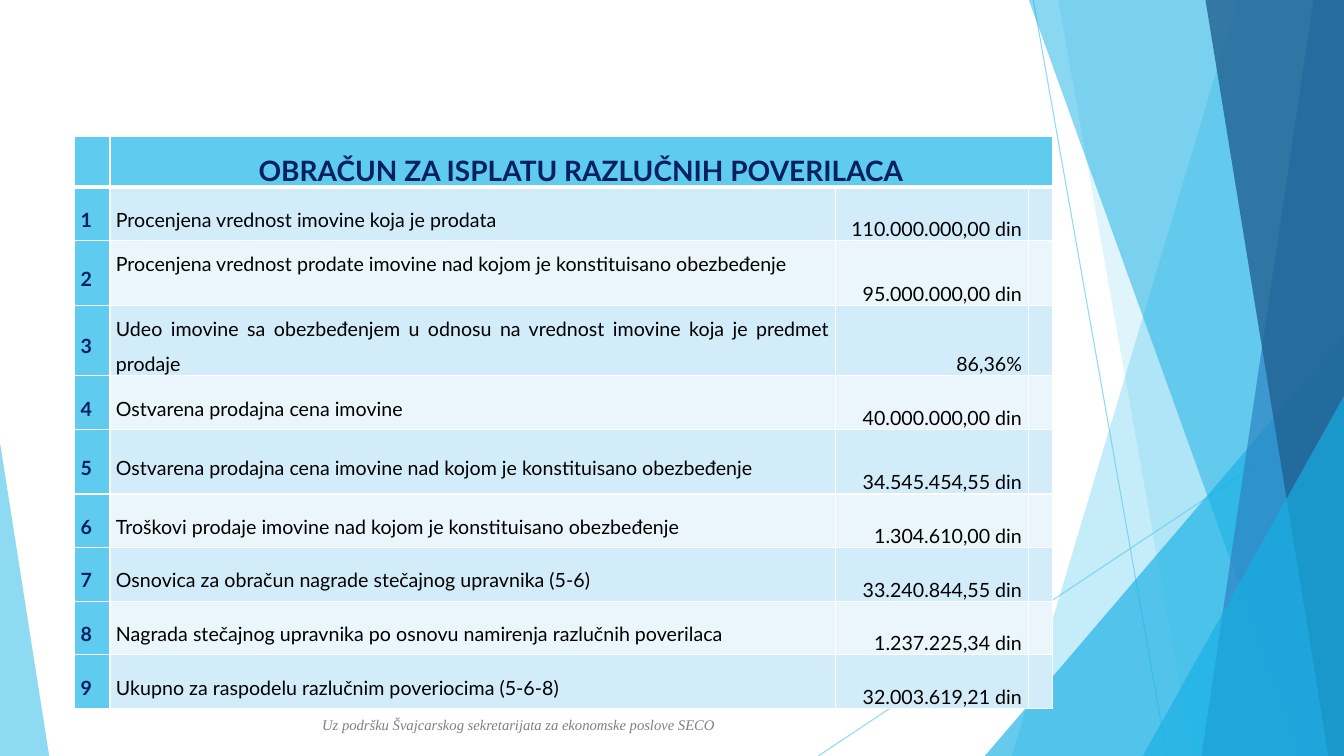
from lxml.etree import SubElement
from pptx import Presentation
from pptx.dml.color import RGBColor
from pptx.enum.shapes import MSO_CONNECTOR, MSO_SHAPE
from pptx.enum.text import MSO_ANCHOR, PP_ALIGN
from pptx.oxml import parse_xml
from pptx.oxml.ns import nsdecls, qn
from pptx.util import Cm, Pt

W, H = 33.87, 19.05
SKY, AZURE, NAVY, BLACK = "5FCBEF", "17B0E4", "002060", "000000"
BANDS = ["D2ECF9", "EAF6FC"]

HEADING = "OBRAČUN ZA ISPLATU RAZLUČNIH POVERILACA"
FOOTER = "Uz podršku Švajcarskog sekretarijata za ekonomske poslove SECO"
# description, amount, row height
ITEMS = [
    ("Procenjena vrednost imovine koja je prodata", "110.000.000,00 din", 1.35),
    ("Procenjena vrednost prodate imovine nad kojom je konstituisano obezbeđenje",
     "95.000.000,00 din", 1.63),
    ("Udeo imovine sa obezbeđenjem u odnosu na vrednost imovine koja je predmet prodaje",
     "86,36%", 1.63),
    ("Ostvarena prodajna cena imovine", "40.000.000,00 din", 1.35),
    ("Ostvarena prodajna cena imovine nad kojom je konstituisano obezbeđenje",
     "34.545.454,55 din", 1.63),
    ("Troškovi prodaje imovine nad kojom je konstituisano obezbeđenje",
     "1.304.610,00 din", 1.35),
    ("Osnovica za obračun nagrade stečajnog upravnika (5-6)", "33.240.844,55 din", 1.35),
    ("Nagrada stečajnog upravnika po osnovu namirenja razlučnih poverilaca",
     "1.237.225,34 din", 1.35),
    ("Ukupno za raspodelu razlučnim poveriocima (5-6-8)", "32.003.619,21 din", 1.35),
]
HEADING_HEIGHT = 1.17
COLUMNS = [0.89, 18.29, 4.85, 0.43]

RAYS = [(26.04, 0, 29.41, H), (W, 10.24, 20.62, H)]
# band: top x, bottom x; triangle: left, top, apex position; then colour, opacity
FACETS = [
    ("band", (31.19, 25.5), SKY, 36),
    ("band", (26.67, 30.05), SKY, 20),
    ("triangle", (24.82, 8.46, W - 24.82, 1), AZURE, 66),
    ("band", (25.93, 32.79), AZURE, 50),
    ("band", (33.1, 30.28), "2E83C3", 70),
    ("band", (30.38, 33.48), "226292", 80),
    ("triangle", (28.8, 9.98, W - 28.8, 1), AZURE, 66),
    ("triangle", (0, 11.15, 1.24, 0), SKY, 70),
]


def rgb(value):
    return RGBColor.from_string(value)


def set_opacity(element, percent):
    for color in element.iter(qn("a:srgbClr")):
        SubElement(color, qn("a:alpha"), val=str(percent * 1000))


def add_ray(s, x1, y1, x2, y2):
    ray = s.shapes.add_connector(MSO_CONNECTOR.STRAIGHT, Cm(x1), Cm(y1), Cm(x2), Cm(y2))
    ray.line.color.rgb = rgb(SKY)
    ray.line.width = Pt(0.75)
    sp_pr = ray._element.spPr
    set_opacity(sp_pr, 70)
    SubElement(sp_pr, qn("a:effectLst"))


def add_facet(s, kind, geometry, color, opacity):
    if kind == "band":
        top, bottom = geometry
        builder = s.shapes.build_freeform(Cm(top), 0)
        builder.add_line_segments([(Cm(W), 0), (Cm(W), Cm(H)), (Cm(bottom), Cm(H))])
        sp = builder.convert_to_shape()
    else:
        left, top, width, apex = geometry
        sp = s.shapes.add_shape(MSO_SHAPE.ISOSCELES_TRIANGLE,
                                Cm(left), Cm(top), Cm(width), Cm(H - top))
        sp.adjustments[0] = apex
    sp.shadow.inherit = False
    sp.line.fill.background()
    sp.fill.solid()
    sp.fill.fore_color.rgb = rgb(color)
    set_opacity(sp._element.spPr, opacity)


def write(tf, text, color, **fmt):
    p = tf.paragraphs[0]
    r = p.add_run()
    r.text = text
    for name, value in fmt.items():
        setattr(r.font, name, value)
    r.font.color.rgb = rgb(color)
    return p


def fill_cell(cell, fill, top=1, bottom=1):
    """Colour a cell and give it white borders; widths are in points."""
    cell.fill.solid()
    cell.fill.fore_color.rgb = rgb(fill)
    widths = {"lnL": 1, "lnR": 1, "lnT": top, "lnB": bottom}
    for i, (tag, width) in enumerate(widths.items()):
        cell._tc.get_or_add_tcPr().insert(i, parse_xml(
            f'<a:{tag} {nsdecls("a")} w="{Pt(width)}"><a:solidFill>'
            f'<a:srgbClr val="FFFFFF"/></a:solidFill></a:{tag}>'))


def write_cell(cell, text, color, size, bold, align, anchor=MSO_ANCHOR.MIDDLE):
    cell.margin_left = cell.margin_right = Cm(0.15)
    cell.margin_top = cell.margin_bottom = 0
    cell.vertical_anchor = anchor
    p = write(cell.text_frame, text, color, name="Lato", size=Pt(size), bold=bold)
    p.alignment = align
    p.line_spacing = 1.5


def add_payout_table(s):
    heights = [HEADING_HEIGHT] + [item[2] for item in ITEMS]
    table = s.shapes.add_table(len(heights), len(COLUMNS), Cm(1.88), Cm(3.44),
                               Cm(sum(COLUMNS)), Cm(sum(heights))).table
    for column, width in zip(table.columns, COLUMNS):
        column.width = Cm(width)
    for row, height in zip(table.rows, heights):
        row.height = Cm(height)

    for cell in table.rows[0].cells:
        fill_cell(cell, SKY, bottom=3)
    heading = table.cell(0, 1)
    heading.merge(table.cell(0, len(COLUMNS) - 1))
    write_cell(heading, HEADING, NAVY, 20, True, PP_ALIGN.CENTER)

    for n, (description, amount, _) in enumerate(ITEMS, 1):
        number, label, value, _ = cells = list(table.rows[n].cells)
        for c, cell in enumerate(cells):
            fill_cell(cell, BANDS[(n - 1) % 2] if c else SKY, top=3 if n == 1 else 1)
        write_cell(number, str(n), NAVY, 14, True, PP_ALIGN.JUSTIFY)
        write_cell(label, description, BLACK, 14, False, PP_ALIGN.JUSTIFY,
                   MSO_ANCHOR.TOP if n == 2 else MSO_ANCHOR.MIDDLE)
        write_cell(value, amount, BLACK, 14, False, PP_ALIGN.RIGHT, MSO_ANCHOR.BOTTOM)


def main():
    prs = Presentation()
    prs.slide_width, prs.slide_height = Cm(W), Cm(H)
    s = prs.slides.add_slide(prs.slide_layouts[6])
    for ray in RAYS:
        add_ray(s, *ray)
    for facet in FACETS:
        add_facet(s, *facet)
    tf = s.shapes.add_textbox(Cm(7.87), Cm(17.91), Cm(11.15), Cm(0.71)).text_frame
    tf.word_wrap = True
    write(tf, FOOTER, "808080", name="Times New Roman", size=Pt(10.5), italic=True)
    add_payout_table(s)
    prs.save("out.pptx")


if __name__ == "__main__":
    main()
